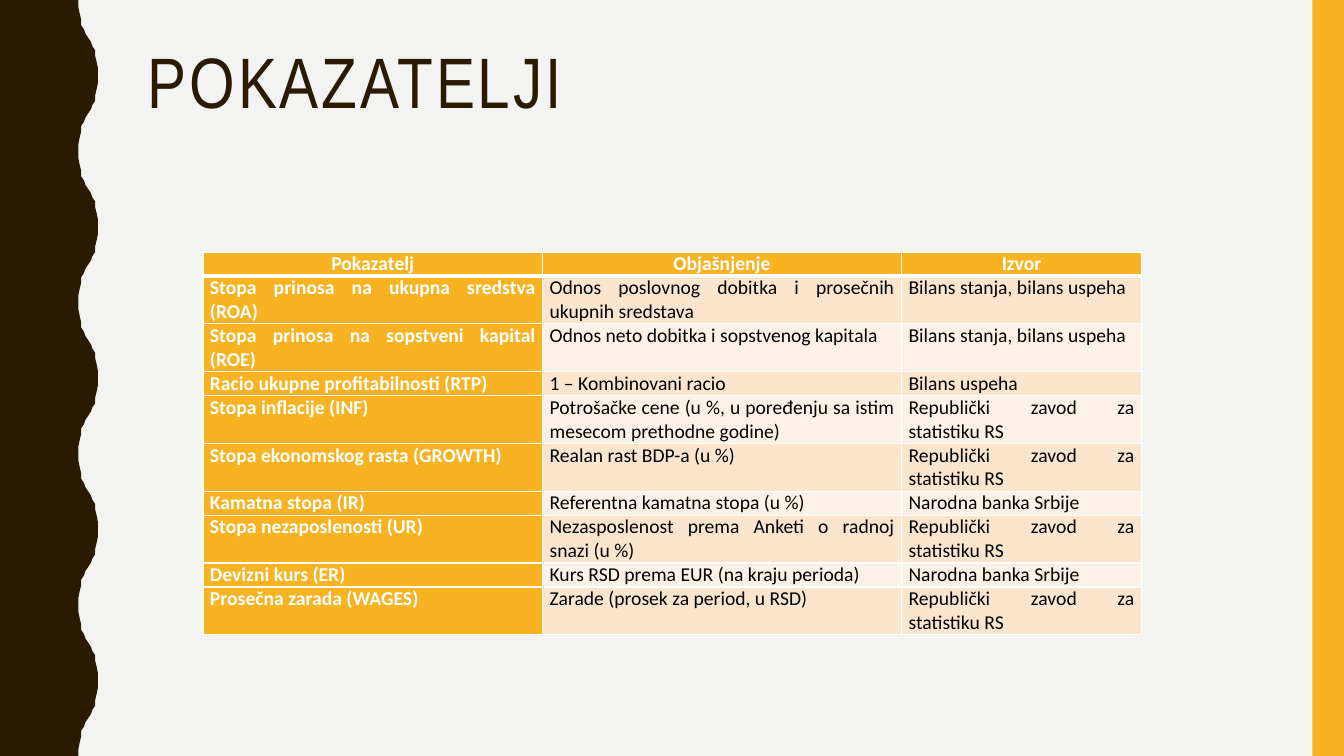
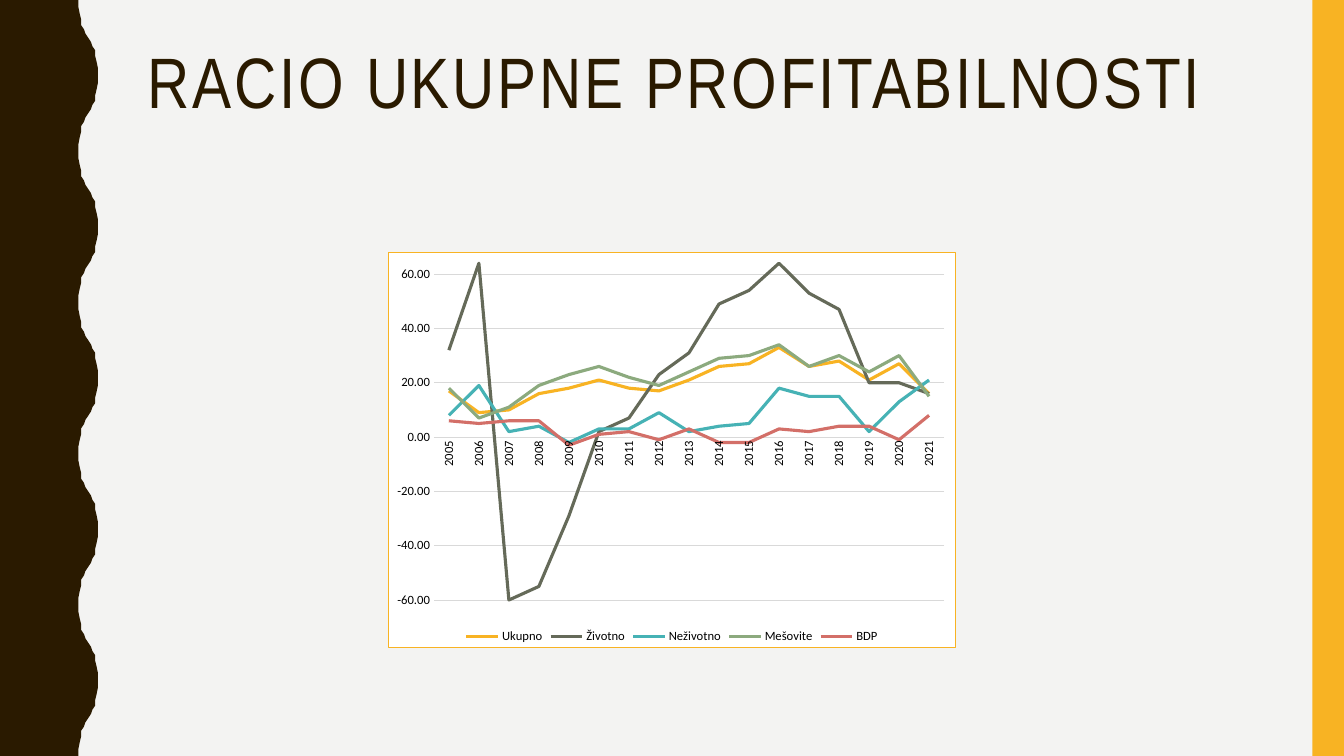
from dataclasses import dataclass

from lxml import etree
from pptx import Presentation
from pptx import util as u
from pptx.chart.data import CategoryChartData
from pptx.dml.color import RGBColor
from pptx.enum import chart as ch
from pptx.enum import shapes, text
from pptx.oxml import parse_xml
from pptx.oxml.ns import nsdecls, qn

# Shared look, lengths in points
WIDTH, HEIGHT = 960, 540
PAPER, DARK, GOLD = "F3F3F2", "2A1A00", "F8B323"
WHITE, BLACK, GRID = "FFFFFF", "000000", "D9D9D9"
BANDS = ("FCE5CD", "FEF2E8")
TITLE_FONT, BODY_FONT = "Arial Narrow", "Calibri"

# Left wave: a quarter of it as (inward, down), mirrored and repeated
WAVE_LEFT, WAVE_DEPTH, HALF_WAVE = 56, 14, 54
QUARTER = ((0, 0), (0.2, 5), (0.8, 10), (1.5, 14.4),
           (2.4, 18), (3.6, 21), (5, 24), (7, 27))

LINE_HEIGHT = 17.1
COLUMNS = (242.6, 256.4, 171.4)
HEADINGS = ("Pokazatelj", "Objašnjenje", "Izvor")


@dataclass(frozen=True)
class Indicator:
    name: str
    explanation: str
    source: str
    lines: int = 1


@dataclass(frozen=True)
class Trend:
    name: str
    colour: str
    values: tuple[int, ...]


STATISTICS = "Republički zavod za statistiku RS"
STATEMENTS = "Bilans stanja, bilans uspeha"
CENTRAL_BANK = "Narodna banka Srbije"

INDICATORS = (
    Indicator("Stopa prinosa na ukupna sredstva (ROA)",
              "Odnos poslovnog dobitka i prosečnih ukupnih sredstava", STATEMENTS, 2),
    Indicator("Stopa prinosa na sopstveni kapital (ROE)",
              "Odnos neto dobitka i sopstvenog kapitala", STATEMENTS, 2),
    Indicator("Racio ukupne profitabilnosti (RTP)", "1 – Kombinovani racio", "Bilans uspeha"),
    Indicator("Stopa inflacije (INF)",
              "Potrošačke cene (u %, u poređenju sa istim mesecom prethodne godine)",
              STATISTICS, 2),
    Indicator("Stopa ekonomskog rasta (GROWTH)", "Realan rast BDP-a (u %)", STATISTICS, 2),
    Indicator("Kamatna stopa (IR)", "Referentna kamatna stopa (u %)", CENTRAL_BANK),
    Indicator("Stopa nezaposlenosti (UR)",
              "Nezasposlenost prema Anketi o radnoj snazi (u %)", STATISTICS, 2),
    Indicator("Devizni kurs (ER)", "Kurs RSD prema EUR (na kraju perioda)", CENTRAL_BANK),
    Indicator("Prosečna zarada (WAGES)", "Zarade (prosek za period, u RSD)", STATISTICS, 2),
)

TRENDS = (
    Trend("Ukupno", GOLD,
          (17, 9, 10, 16, 18, 21, 18, 17, 21, 26, 27, 33, 26, 28, 21, 27, 16)),
    Trend("Životno", "656A59",
          (32, 64, -60, -55, -29, 2, 7, 23, 31, 49, 54, 64, 53, 47, 20, 20, 16)),
    Trend("Neživotno", "46B2B5",
          (8, 19, 2, 4, -2, 3, 3, 9, 2, 4, 5, 18, 15, 15, 2, 13, 21)),
    Trend("Mešovite", "8CAA7E",
          (18, 7, 11, 19, 23, 26, 22, 19, 24, 29, 30, 34, 26, 30, 24, 30, 15)),
    Trend("BDP", "D36F68",
          (6, 5, 6, 6, -3, 1, 2, -1, 3, -2, -2, 3, 2, 4, 4, -1, 8)),
)


def rgb(colour: str) -> RGBColor:
    return RGBColor.from_string(colour)


def paint(target, colour: str) -> None:
    target.fill.solid()
    target.fill.fore_color.rgb = rgb(colour)


def style_font(font, name: str, size: float, colour: str, bold: bool = False) -> None:
    font.name, font.size, font.bold = name, u.Pt(size), bold
    font.color.rgb = rgb(colour)


def style_line(line, colour: str, width: float) -> None:
    line.color.rgb = rgb(colour)
    line.width = u.Pt(width)


# Frame shared by the slides
def wave_points() -> list[tuple[float, float]]:
    rest = [(WAVE_DEPTH - x, HALF_WAVE - y) for x, y in reversed(QUARTER[:-1])]
    half = list(QUARTER) + rest
    points = []
    for index in range(HEIGHT // HALF_WAVE):
        for x, y in half:
            inward = WAVE_DEPTH - x if index % 2 else x
            points.append((WAVE_LEFT + inward, index * HALF_WAVE + y))
    return points


def new_slide(prs, title: str):
    slide = prs.slides.add_slide(prs.slide_layouts[6])
    paint(slide.background, PAPER)

    outline = slide.shapes.build_freeform(0, 0, scale=u.Pt(1))
    outline.add_line_segments(wave_points() + [(0, HEIGHT)], close=True)
    wave = outline.convert_to_shape()
    stripe = slide.shapes.add_shape(shapes.MSO_SHAPE.RECTANGLE, u.Pt(937.5), 0,
                                    u.Pt(22.5), u.Pt(HEIGHT))
    for part, colour in ((wave, DARK), (stripe, GOLD)):
        paint(part, colour)
        part.line.fill.background()
        part.shadow.inherit = False

    heading = slide.shapes.add_textbox(u.Pt(98.6), u.Pt(30), u.Pt(801.4), u.Pt(117.4))
    heading.text_frame.word_wrap = True
    heading.text_frame.text = title
    paragraph = heading.text_frame.paragraphs[0]
    paragraph.line_spacing = 0.9
    run = paragraph.runs[0]
    style_font(run.font, TITLE_FONT, 51, DARK)
    run.font._element.set("spc", "200")
    return slide


# Table of indicators
def add_borders(cell, top: float, bottom: float) -> None:
    props = cell._tc.get_or_add_tcPr()
    for side, width in (("L", 1), ("R", 1), ("T", top), ("B", bottom)):
        edge = etree.SubElement(props, qn(f"a:ln{side}"), w=str(u.Pt(width)))
        fill = etree.SubElement(edge, qn("a:solidFill"))
        etree.SubElement(fill, qn("a:srgbClr"), val=WHITE)


def add_indicator_table(slide) -> None:
    rows = [(HEADINGS, 1)]
    rows += [((i.name, i.explanation, i.source), i.lines) for i in INDICATORS]
    total = LINE_HEIGHT * sum(lines for _, lines in rows)
    table = slide.shapes.add_table(len(rows), len(COLUMNS), u.Pt(145), u.Pt(180),
                                   u.Pt(sum(COLUMNS)), u.Pt(total)).table
    table.horz_banding = False
    for column, width in zip(table.columns, COLUMNS):
        column.width = u.Pt(width)
    for r, (entries, lines) in enumerate(rows):
        table.rows[r].height = u.Pt(LINE_HEIGHT * lines)
        for c, entry in enumerate(entries):
            cell = table.cell(r, c)
            strong = r == 0 or c == 0
            add_borders(cell, top=3 if r == 1 else 1, bottom=3 if r == 0 else 1)
            paint(cell, GOLD if strong else BANDS[(r - 1) % 2])
            cell.margin_left = cell.margin_right = u.Pt(5)
            cell.margin_top = cell.margin_bottom = 0
            cell.text_frame.text = entry
            paragraph = cell.text_frame.paragraphs[0]
            paragraph.alignment = text.PP_ALIGN.JUSTIFY if r else text.PP_ALIGN.CENTER
            style_font(paragraph.runs[0].font, BODY_FONT, 14,
                       WHITE if strong else BLACK, strong)


# Chart of profitability
def frame_chart(chart) -> None:
    border = parse_xml(
        f'<c:spPr {nsdecls("c", "a")}>'
        f'<a:solidFill><a:srgbClr val="{WHITE}"/></a:solidFill>'
        f'<a:ln w="{u.Pt(1)}"><a:solidFill><a:srgbClr val="{GOLD}"/></a:solidFill></a:ln>'
        '</c:spPr>')
    chart.element.find(qn("c:chart")).addnext(border)


def place_plot(chart, x: float, y: float, w: float, h: float) -> None:
    plot_area = chart.element.xpath("c:chart/c:plotArea")[0]
    for old in plot_area.findall(qn("c:layout")):
        plot_area.remove(old)
    layout = etree.Element(qn("c:layout"))
    manual = etree.SubElement(layout, qn("c:manualLayout"))
    settings = {"layoutTarget": "inner", "xMode": "edge", "yMode": "edge",
                "x": x, "y": y, "w": w, "h": h}
    for tag, value in settings.items():
        etree.SubElement(manual, qn(f"c:{tag}"), val=str(value))
    plot_area.insert(0, layout)


def add_profit_chart(slide) -> None:
    data = CategoryChartData(number_format="0.00")
    data.categories = [str(year) for year in range(2005, 2022)]
    for trend in TRENDS:
        data.add_series(trend.name, trend.values)
    chart = slide.shapes.add_chart(ch.XL_CHART_TYPE.LINE, u.Pt(277), u.Pt(180),
                                   u.Pt(406), u.Pt(283), data).chart
    chart.has_title = False
    style_font(chart.font, BODY_FONT, 10, BLACK)
    frame_chart(chart)
    place_plot(chart, 0.08, 0.02, 0.9, 0.86)

    chart.plots[0].vary_by_categories = False
    for series, trend in zip(chart.plots[0].series, TRENDS):
        series.smooth = False
        series.marker.style = ch.XL_MARKER_STYLE.NONE
        style_line(series.format.line, trend.colour, 2.25)

    years, percents = chart.category_axis, chart.value_axis
    for axis in (years, percents):
        axis.major_tick_mark = axis.minor_tick_mark = ch.XL_TICK_MARK.NONE
        style_font(axis.tick_labels.font, BODY_FONT, 9, BLACK)
    style_line(years.format.line, GRID, 0.75)
    chart.element.xpath("//c:catAx/c:txPr/a:bodyPr")[0].set("rot", "-5400000")
    percents.minimum_scale, percents.maximum_scale = -60, 65
    percents.major_unit = 20
    percents.tick_labels.number_format = "0.00"
    percents.tick_labels.number_format_is_linked = False
    percents.format.line.fill.background()
    style_line(percents.major_gridlines.format.line, GRID, 0.75)

    chart.has_legend = True
    chart.legend.position = ch.XL_LEGEND_POSITION.BOTTOM
    chart.legend.include_in_layout = False
    style_font(chart.legend.font, BODY_FONT, 9, BLACK)


def main() -> None:
    prs = Presentation()
    prs.slide_width, prs.slide_height = u.Pt(WIDTH), u.Pt(HEIGHT)
    add_indicator_table(new_slide(prs, "POKAZATELJI"))
    add_profit_chart(new_slide(prs, "RACIO UKUPNE PROFITABILNOSTI"))
    prs.save("out.pptx")


if __name__ == "__main__":
    main()
